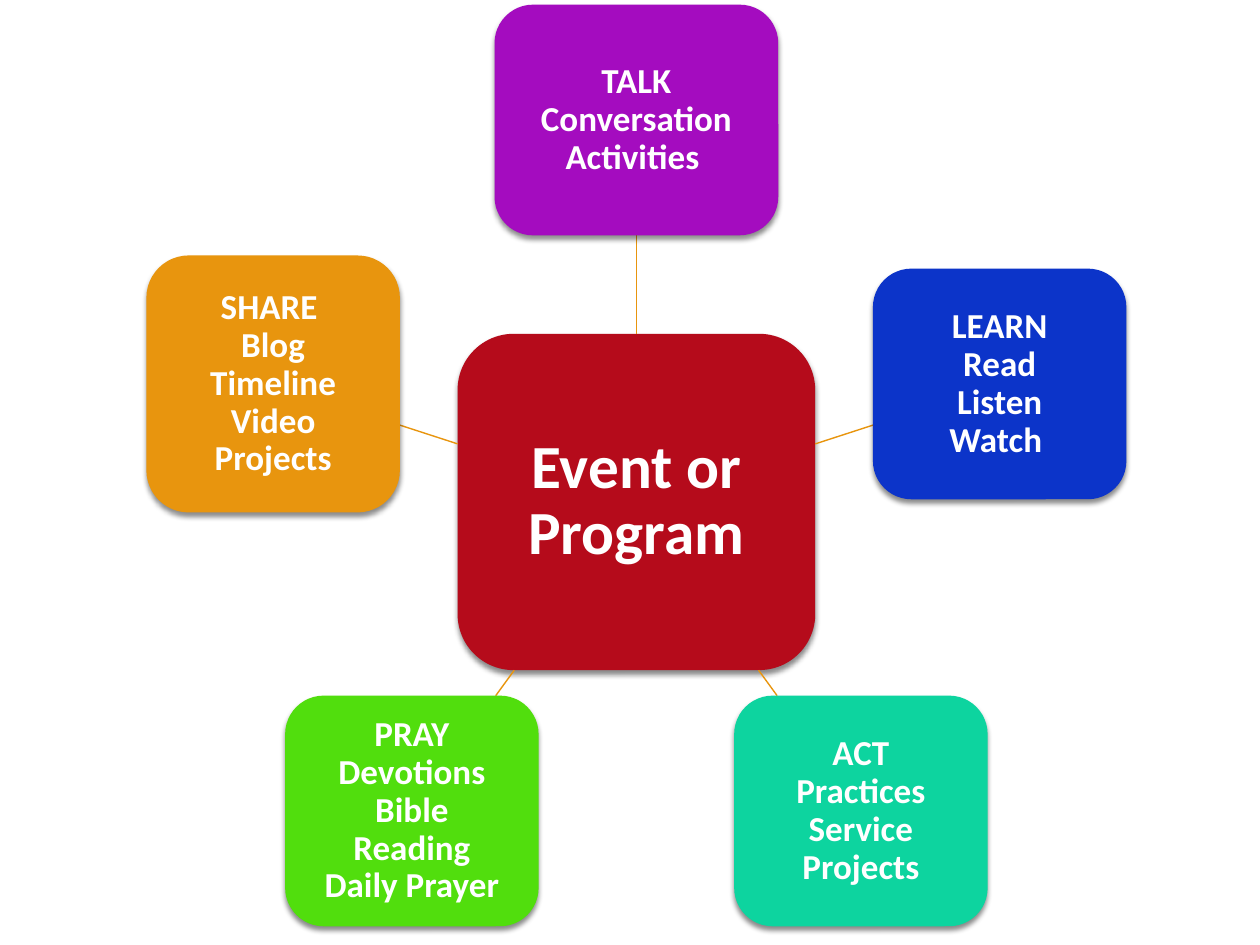
from math import cos, radians, sin

from lxml import etree
from pptx import Presentation
from pptx.dml.color import RGBColor
from pptx.enum.shapes import MSO_CONNECTOR as Connector, MSO_SHAPE as Shape
from pptx.enum.text import MSO_ANCHOR as Anchor, PP_ALIGN as Align
from pptx.oxml import parse_xml
from pptx.oxml.ns import nsdecls, qn
from pptx.util import Cm, Pt

COLORS = {
    "red": "B50B1B",
    "purple": "A40CBF",
    "blue": "0C34C9",
    "teal": "0DD49F",
    "green": "51DE0D",
    "orange": "E8950E",
    "white": "FFFFFF",
}
CENTER_X, CENTER_Y, RADIUS = 12.83, 10.12, 7.7
HUB_WIDTH, HUB_HEIGHT = 7.21, 6.78
TOPICS = [
    ("TALK\vConversation Activities ", "purple", 5.72, 4.65),
    ("LEARN\vRead\vListen\vWatch ", "blue", 5.11, 4.65),
    ("ACT\vPractices\vService\vProjects", "teal", 5.11, 4.65),
    ("PRAY\vDevotions Bible Reading Daily Prayer", "green", 5.11, 4.65),
    ("SHARE \vBlog Timeline\vVideo\vProjects", "orange", 5.11, 5.18),
]


def add_card(text, color, x, y, width, height, size, inset):
    card = page.shapes.add_shape(
        Shape.ROUNDED_RECTANGLE,
        Cm(x - width / 2), Cm(y - height / 2), Cm(width), Cm(height),
    )
    card.fill.solid()
    card.fill.fore_color.rgb = RGBColor.from_string(COLORS[color])
    card.line.fill.background()
    card.shadow.inherit = False
    card._element.spPr.find(qn("a:effectLst")).append(parse_xml(
        f'<a:outerShdw {nsdecls("a")} blurRad="{Pt(3)}" dist="{Pt(2.4)}" '
        'dir="5400000" rotWithShape="0"><a:srgbClr val="000000">'
        '<a:alpha val="45000"/></a:srgbClr></a:outerShdw>'
    ))
    frame = card.text_frame
    frame.word_wrap = True
    frame.vertical_anchor = Anchor.MIDDLE
    frame.margin_left = frame.margin_right = Cm(inset)
    frame.margin_top = frame.margin_bottom = Cm(inset)
    frame.text = text
    para = frame.paragraphs[0]
    para.alignment = Align.CENTER
    para.line_spacing = 0.9
    for span in para.runs:
        span.font.name = "Calibri"
        span.font.size = Pt(size)
        span.font.bold = True
        span.font.color.rgb = RGBColor.from_string(COLORS["white"])


def edge_distance(width, height, across, up):
    return min(width / 2 / max(abs(across), 0.01), height / 2 / max(abs(up), 0.01))


deck = Presentation()
deck.slide_width, deck.slide_height = Cm(25.4), Cm(19.05)
page = deck.slides.add_slide(deck.slide_layouts[6])

add_card("Event or Program", "red", CENTER_X, CENTER_Y, HUB_WIDTH, HUB_HEIGHT, 35, 0.58)

for index, (text, color, width, height) in enumerate(TOPICS):
    angle = radians(index * 360 / len(TOPICS))
    across, up = sin(angle), cos(angle)
    start = edge_distance(HUB_WIDTH, HUB_HEIGHT, across, up)
    end = RADIUS - edge_distance(width, height, across, up)
    spoke = page.shapes.add_connector(
        Connector.STRAIGHT,
        Cm(CENTER_X + start * across), Cm(CENTER_Y - start * up),
        Cm(CENTER_X + end * across), Cm(CENTER_Y - end * up),
    )
    spoke.line.color.rgb = RGBColor.from_string(COLORS["orange"])
    spoke.line.width = Pt(0.79)
    etree.SubElement(spoke._element.spPr, qn("a:effectLst"))
    add_card(text, color, CENTER_X + RADIUS * across, CENTER_Y - RADIUS * up,
             width, height, 20, 0.38)

deck.save("out.pptx")
